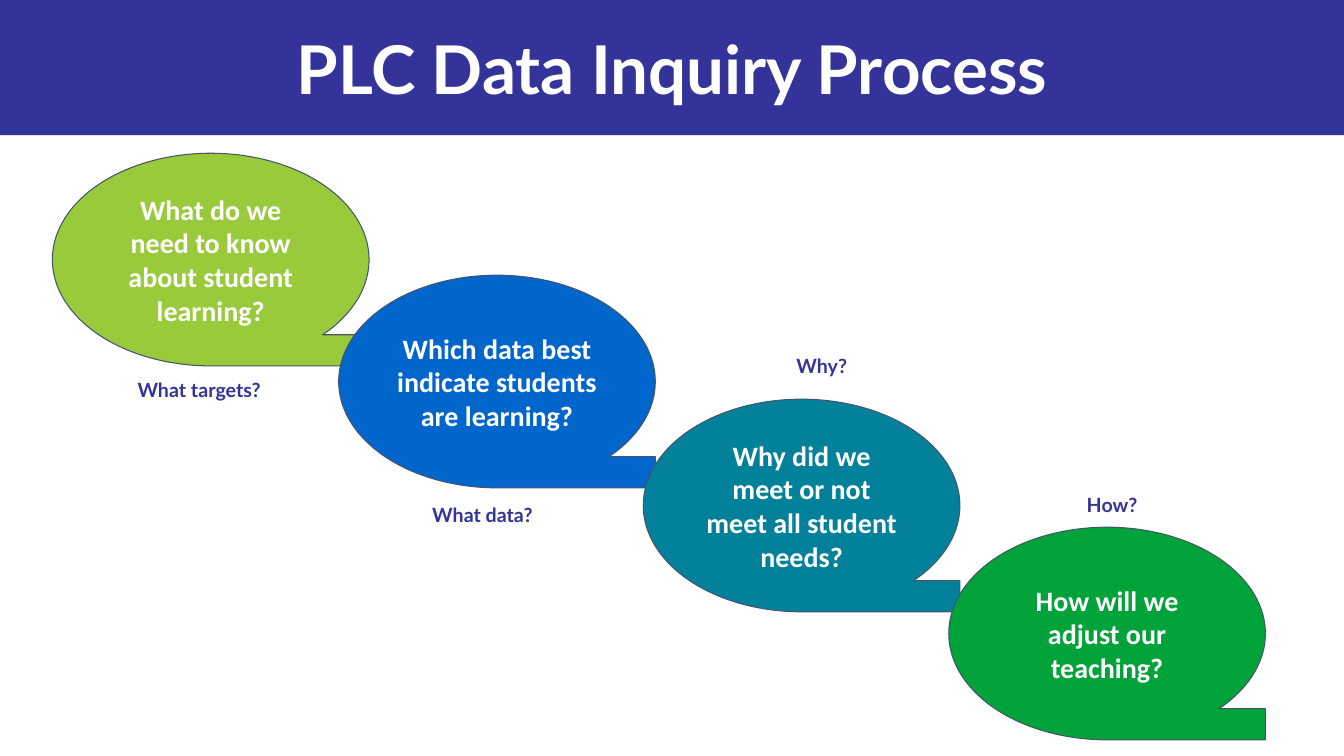
from dataclasses import dataclass

from pptx import Presentation
from pptx.dml.color import RGBColor
from pptx.enum.shapes import MSO_SHAPE
from pptx.enum.text import MSO_ANCHOR, MSO_AUTO_SIZE, PP_ALIGN
from pptx.util import Inches, Pt

TITLE = "PLC Data Inquiry Process"

# Places and sizes are percentages of the slide's width and height.
# Question, fill, (left, top)
QUESTIONS = [
    ("What do we need to know about student learning?", "99CA3C", (3.9, 20.27)),
    ("Which data best indicate students are learning?", "0066CC", (25.2, 36.4)),
    ("Why did we meet or not meet all student needs?", "03819B", (47.86, 52.8)),
    ("How will we adjust our teaching?", "00A339", (70.59, 69.73)),
]
# Prompt, (left, top, width, height)
PROMPTS = [
    ("What targets?", (8.03, 49.33, 13.58, 5.6)),
    ("What data?", (30.23, 65.87, 11.33, 4.4)),
    ("Why?", (57.84, 46.13, 6.6, 5.6)),
    ("How?", (79.37, 64.53, 6.75, 4.27)),
]
BUBBLE_SIZE = (23.56, 28.13)
BAND = (0, 0, 100, 17.87)


@dataclass(frozen=True)
class Theme:
    indigo: str = "333399"
    white: str = "FFFFFF"
    outline: str = "44546A"
    heading_font: str = "Lato"
    bubble_font: str = "Calibri"
    title_size: int = 48
    bubble_size: int = 20
    prompt_size: int = 14


THEME = Theme()
TITLE_STYLE = (THEME.heading_font, THEME.title_size, THEME.white)
BUBBLE_STYLE = (THEME.bubble_font, THEME.bubble_size, THEME.white)
PROMPT_STYLE = (THEME.heading_font, THEME.prompt_size, THEME.indigo)

presentation = Presentation()
presentation.slide_width = Inches(13.33)
presentation.slide_height = Inches(7.5)


def place(left, top, width, height):
    """Turn percentages of the slide into lengths."""
    across, down = presentation.slide_width, presentation.slide_height
    return [int(share * full / 100) for share, full in
            zip((left, top, width, height), (across, down, across, down))]


def set_fill(shape, color):
    shape.fill.solid()
    shape.fill.fore_color.rgb = RGBColor.from_string(color)


def write(shape, text, style, anchor=MSO_ANCHOR.MIDDLE):
    """Set centred bold text in a (font, size, color) style."""
    font_name, size, color = style
    frame = shape.text_frame
    frame.text = text
    frame_format = {"word_wrap": True, "auto_size": MSO_AUTO_SIZE.NONE,
                    "vertical_anchor": anchor}
    for name, value in frame_format.items():
        setattr(frame, name, value)
    paragraph = frame.paragraphs[0]
    paragraph.alignment = PP_ALIGN.CENTER
    font = paragraph.runs[0].font
    for name, value in {"name": font_name, "size": Pt(size), "bold": True}.items():
        setattr(font, name, value)
    font.color.rgb = RGBColor.from_string(color)


def add_bubble(slide, question, color, corner):
    bubble = slide.shapes.add_shape(
        MSO_SHAPE.FLOWCHART_SEQUENTIAL_ACCESS_STORAGE, *place(*corner, *BUBBLE_SIZE))
    bubble.shadow.inherit = False
    set_fill(bubble, color)
    bubble.line.color.rgb = RGBColor.from_string(THEME.outline)
    bubble.line.width = Pt(0.75)
    write(bubble, question, BUBBLE_STYLE)
    for side in ("left", "top", "right", "bottom"):
        setattr(bubble.text_frame, f"margin_{side}", Inches(0.1))


def main():
    slide = presentation.slides.add_slide(presentation.slide_layouts.get_by_name("Title Only"))
    title = slide.shapes.title
    title.left, title.top, title.width, title.height = place(*BAND)
    set_fill(title, THEME.indigo)
    write(title, TITLE, TITLE_STYLE)
    title.text_frame.paragraphs[0].space_after = Pt(2)

    for question, color, corner in QUESTIONS:
        add_bubble(slide, question, color, corner)
    for prompt, box in PROMPTS:
        write(slide.shapes.add_textbox(*place(*box)), prompt, PROMPT_STYLE, MSO_ANCHOR.TOP)
    presentation.save("out.pptx")


if __name__ == "__main__":
    main()
